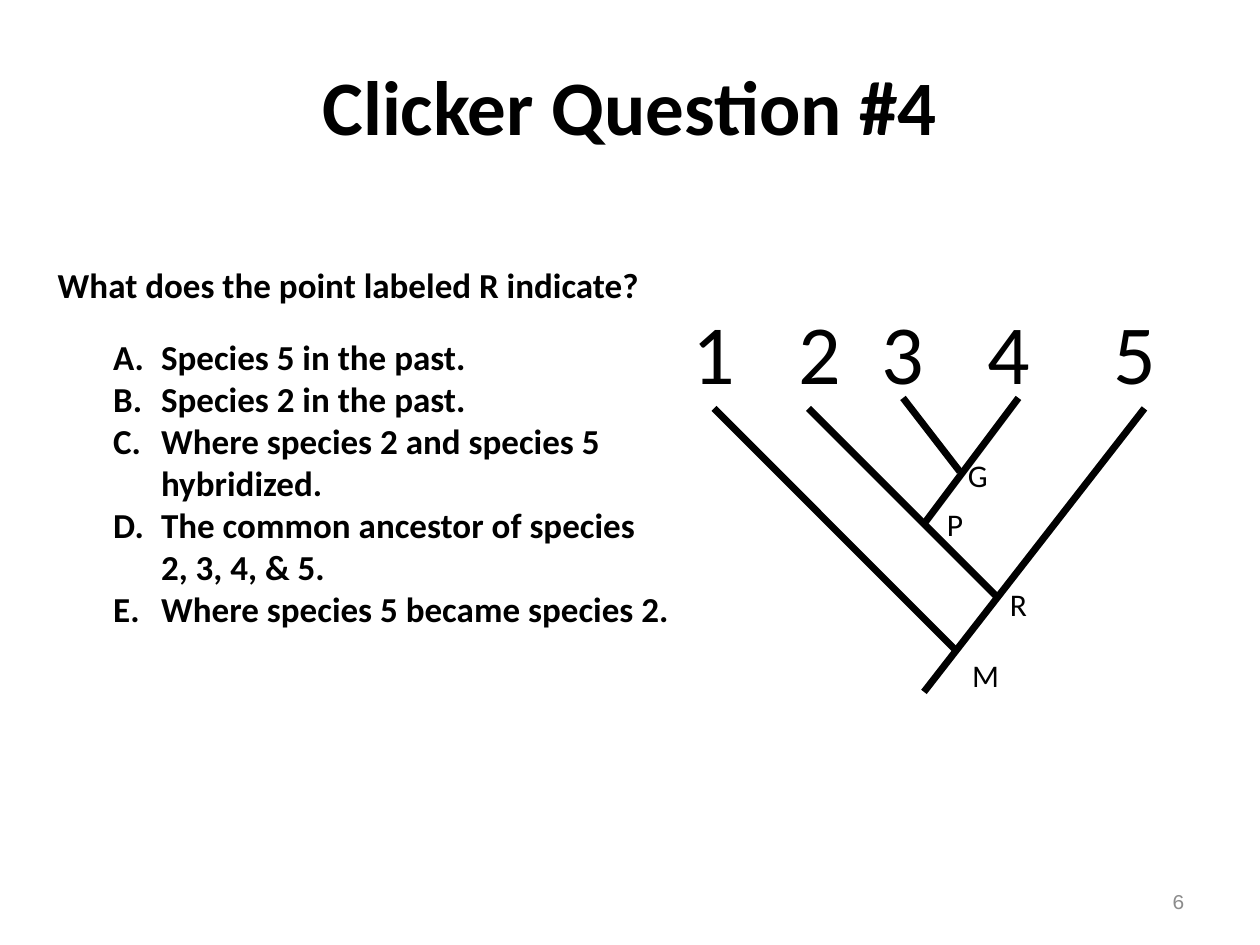
from dataclasses import dataclass

from lxml import etree
from pptx import Presentation
from pptx import util as u
from pptx.dml.color import RGBColor
from pptx.enum import shapes, text
from pptx.oxml import ns

COLUMNS, ROWS = 120, 90
OPTIONS = [
    "Species 5 in the past.",
    "Species 2 in the past.",
    "Where species 2 and species 5 hybridized.",
    "The common ancestor of species 2, 3, 4, & 5.",
    "Where species 5 became species 2.",
]
SPECIES = "12345"
SPECIES_CENTRES = [5.67, 6.51, 7.17, 8.01, 9.01]  # inches from the slide's left

# Grid positions: left, top, width, height
NODES = {
    "G": (91, 42.8, 6, 4.8),
    "P": (89, 47.5, 5, 4.8),
    "R": (95, 55.1, 6, 4.8),
    "M": (91.4, 61.9, 6, 4.8),
}
# Grid positions: start column, start row, end column, end row
BRANCHES = [
    (88, 65.9, 109, 38.9),
    (95, 56.9, 77, 38.9),
    (88, 49.9, 97, 37.9),
    (91.4, 44.9, 86, 37.9),
    (91, 61.9, 68, 38.9),
]


@dataclass(frozen=True)
class Theme:
    ink: RGBColor = RGBColor(0, 0, 0)
    paper: RGBColor = RGBColor(255, 255, 255)
    muted: RGBColor = RGBColor(0x8C, 0x8C, 0x8C)
    font: str = "Calibri"
    number_font: str = "Courier New"
    title: int = 44
    species: int = 48
    question: int = 20
    node: int = 18
    number: int = 12
    branch: int = 4


class SlideBuilder:
    def __init__(self, deck, theme):
        self.theme = theme
        self.column = deck.slide_width / COLUMNS
        self.row = deck.slide_height / ROWS
        self.slide = deck.slides.add_slide(deck.slide_layouts[5])

    def place(self, left, top, width, height):
        """Turn grid units into slide lengths."""
        return (round(left * self.column), round(top * self.row),
                round(width * self.column), round(height * self.row))

    def format(self, para, size, bold=False, color=None, font=None):
        for span in para.runs:
            span.font.size = u.Pt(size)
            span.font.bold = bold
            span.font.name = font or self.theme.font
            span.font.color.rgb = color or self.theme.ink

    def title(self, words, area):
        box = self.slide.shapes.title
        box.left, box.top, box.width, box.height = self.place(*area)
        frame = box.text_frame
        frame.text = words
        frame.auto_size = text.MSO_AUTO_SIZE.NONE
        frame.vertical_anchor = text.MSO_ANCHOR.MIDDLE
        frame.paragraphs[0].alignment = text.PP_ALIGN.CENTER
        self.format(frame.paragraphs[0], self.theme.title, bold=True)

    def text_box(self, words, area, filled=False):
        box = self.slide.shapes.add_textbox(*self.place(*area))
        box.text_frame.word_wrap = True
        box.text_frame.text = words
        if filled:
            box.fill.solid()
            box.fill.fore_color.rgb = self.theme.paper
        return box

    def node(self, name, area):
        box = self.text_box(name, area, filled=True)
        self.format(box.text_frame.paragraphs[0], self.theme.node)

    def species_row(self, names, centres, area):
        """Set the names on one line, each centred on its own tab stop."""
        box = self.text_box("".join("\t" + name for name in names), area, filled=True)
        para = box.text_frame.paragraphs[0]
        origin = box.left + box.text_frame.margin_left
        tabs = etree.SubElement(para._p.get_or_add_pPr(), ns.qn("a:tabLst"))
        for centre in centres:
            etree.SubElement(tabs, ns.qn("a:tab"),
                             pos=str(u.Inches(centre) - origin), algn="ctr")
        self.format(para, self.theme.species)

    def question(self, prompt, options, area):
        frame = self.text_box(prompt, area).text_frame
        first = frame.paragraphs[0]
        first._p.get_or_add_pPr().set("marL", str(u.Inches(0.06)))
        self.format(first, self.theme.question, bold=True)
        for index, option in enumerate(options):
            para = frame.add_paragraph()
            para.text = option
            para.level = 1
            para.space_before = u.Pt(0 if index else 17)
            props = para._p.get_or_add_pPr()
            props.set("marL", str(u.Inches(0.88)))
            props.set("indent", str(u.Inches(-0.38)))
            etree.SubElement(props, ns.qn("a:buAutoNum"), type="alphaUcPeriod")
            self.format(para, self.theme.question, bold=True)

    def branch(self, ends):
        line = self.slide.shapes.add_connector(
            shapes.MSO_CONNECTOR.STRAIGHT, *self.place(*ends))
        line.line.color.rgb = self.theme.ink
        line.line.width = u.Pt(self.theme.branch)
        etree.SubElement(line._element.spPr, ns.qn("a:effectLst"))

    def page_number(self, number, area):
        frame = self.text_box(number, area).text_frame
        frame.vertical_anchor = text.MSO_ANCHOR.MIDDLE
        frame.paragraphs[0].alignment = text.PP_ALIGN.RIGHT
        self.format(frame.paragraphs[0], self.theme.number,
                    color=self.theme.muted, font=self.theme.number_font)


def main():
    deck = Presentation()
    deck.slide_width, deck.slide_height = u.Inches(10), u.Inches(7.5)
    page = SlideBuilder(deck, Theme())
    page.species_row(SPECIES, SPECIES_CENTRES, (63, 28, 52, 10.8))
    for name, area in NODES.items():
        page.node(name, area)
    page.question("What does the point labeled R indicate?", OPTIONS,
                  (3.6, 24.5, 61.3, 36.4))
    for ends in BRANCHES:
        page.branch(ends)
    page.title("Clicker Question #4", (0, 0, 120, 20))
    page.page_number("6", (86, 83.4, 28, 4.8))
    deck.save("out.pptx")


if __name__ == "__main__":
    main()
